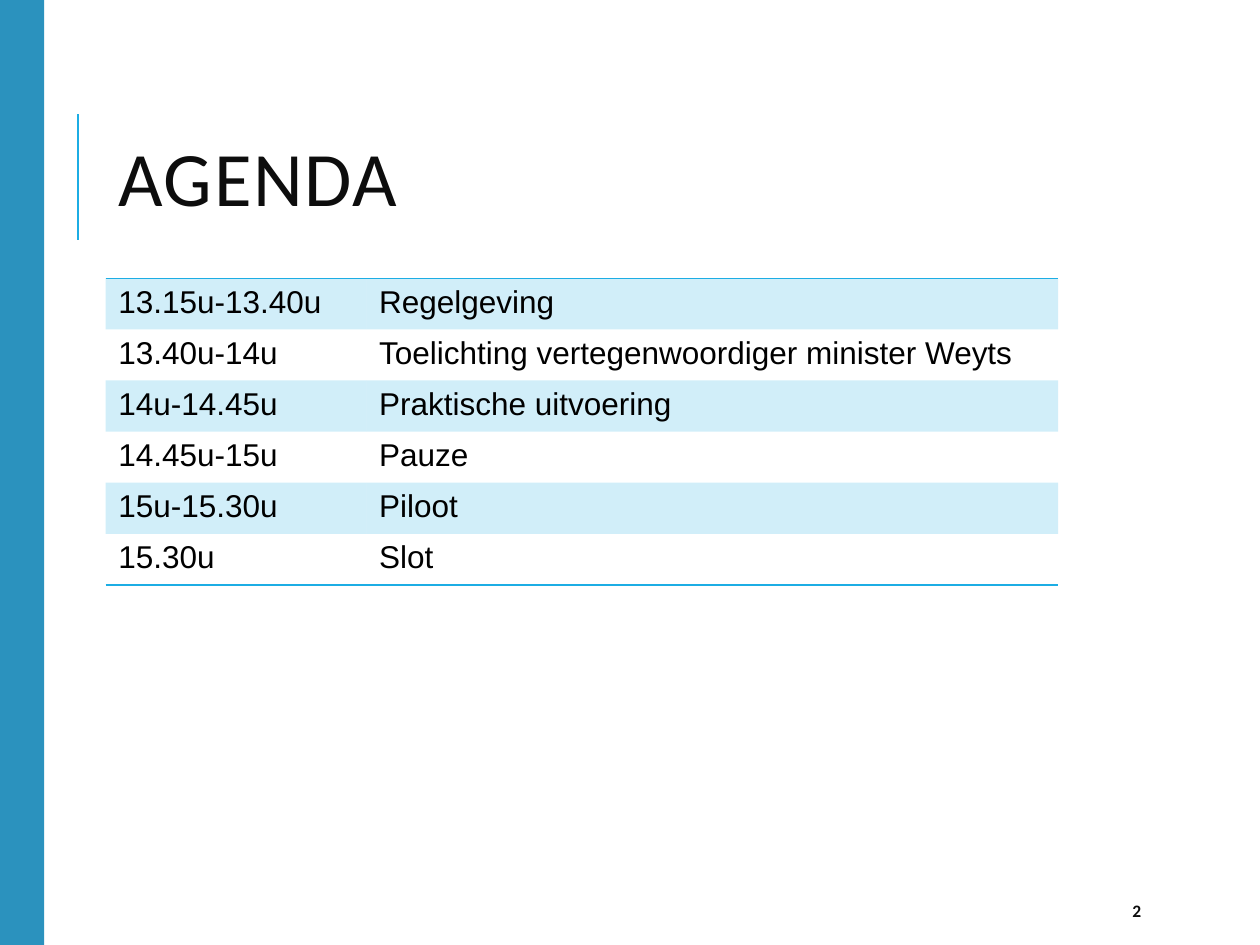
from lxml.etree import SubElement
from pptx import Presentation
from pptx.dml.color import RGBColor
from pptx.enum.shapes import MSO_CONNECTOR as Connector, MSO_SHAPE as Shape
from pptx.enum.text import MSO_ANCHOR as Anchor, PP_ALIGN as Align
from pptx.oxml import parse_xml
from pptx.oxml.ns import nsdecls, qn
from pptx.util import Cm, Pt

THEME = {
    "accent": RGBColor(0x1C, 0xAD, 0xE4),
    "band": RGBColor(0x2B, 0x92, 0xBE),
    "title": {"name": "Calibri", "size": Pt(44), "bold": False, "color": RGBColor(0x0D, 0x0D, 0x0D)},
    "number": {"name": "Calibri", "size": Pt(10), "bold": True, "color": RGBColor(0x0D, 0x0D, 0x0D)},
    "table": {"name": "Arial", "size": Pt(18), "bold": False, "color": RGBColor(0, 0, 0)},
}
AGENDA = [
    ("13.15u-13.40u", "Regelgeving"),
    ("13.40u-14u", "Toelichting vertegenwoordiger minister Weyts"),
    ("14u-14.45u", "Praktische uitvoering"),
    ("14.45u-15u", "Pauze"),
    ("15u-15.30u", "Piloot"),
    ("15.30u", "Slot"),
]


def write(frame, text, style):
    """Put one formatted paragraph in a text frame."""
    paragraph = frame.paragraphs[0]
    paragraph.alignment = Align.LEFT
    run = paragraph.add_run()
    run.text = text
    for key, value in style.items():
        if key == "color":
            run.font.color.rgb = value
        else:
            setattr(run.font, key, value)
    return run


def set_borders(cell, visible):
    """Draw the named sides in the accent colour and hide the others."""
    for position, side in enumerate(("lnL", "lnR", "lnT", "lnB")):
        paint = (f'<a:solidFill><a:srgbClr val="{THEME["accent"]}"/></a:solidFill>'
                 if side in visible else "<a:noFill/>")
        border = parse_xml(f'<a:{side} {nsdecls("a")} w="{Pt(1)}">{paint}</a:{side}>')
        cell._tc.get_or_add_tcPr().insert(position, border)


prs = Presentation()
prs.slide_width, prs.slide_height = Cm(25.4), Cm(19.05)
slide = prs.slides.add_slide(prs.slide_layouts[5])

# Accent line beside the title
accent_line = slide.shapes.add_connector(Connector.STRAIGHT, Cm(1.57), Cm(4.83), Cm(1.57), Cm(2.29))
accent_line.line.color.rgb = THEME["accent"]
accent_line.line.width = Pt(1.5)
SubElement(accent_line._element.spPr, qn("a:effectLst"))

# Band along the left edge
side_band = slide.shapes.add_shape(Shape.RECTANGLE, 0, 0, Cm(0.89), prs.slide_height)
side_band.shadow.inherit = False
side_band.fill.solid()
side_band.fill.fore_color.rgb = THEME["band"]
side_band.line.fill.background()

# Title
heading = slide.shapes.title
heading.left, heading.top, heading.width, heading.height = Cm(2.13), Cm(1.63), Cm(20.24), Cm(4.17)
heading.text_frame.vertical_anchor = Anchor.MIDDLE
heading_run = write(heading.text_frame, "AGENDA", THEME["title"])
heading_run._r.get_or_add_rPr().set("spc", "100")
heading.text_frame.paragraphs[0].line_spacing = 0.8

# Page number
page_number = slide.shapes.add_textbox(Cm(22.58), Cm(17.98), Cm(2.03), Cm(0.76)).text_frame
page_number.word_wrap = True
page_number.vertical_anchor = Anchor.MIDDLE
write(page_number, "2", THEME["number"])

# Agenda table with every other row tinted
row_height, column_widths = Cm(1.03), (Cm(5.26), Cm(13.94))
schedule = slide.shapes.add_table(len(AGENDA), 2, Cm(2.13), Cm(5.61),
                                  sum(column_widths), row_height * len(AGENDA)).table
schedule.first_row = schedule.horz_banding = False
for column, width in zip(schedule.columns, column_widths):
    column.width = width
for index, entry in enumerate(AGENDA):
    schedule.rows[index].height = row_height
    sides = {0: ("lnT",), len(AGENDA) - 1: ("lnB",)}.get(index, ())
    for cell, text in zip(schedule.rows[index].cells, entry):
        write(cell.text_frame, text, THEME["table"])
        if index % 2 == 0:
            cell.fill.solid()
            cell.fill.fore_color.rgb = THEME["accent"]
            tint = cell._tc.tcPr.find(".//" + qn("a:srgbClr"))
            SubElement(tint, qn("a:alpha"), val="20000")
        else:
            cell.fill.background()
        set_borders(cell, sides)

prs.save("out.pptx")
